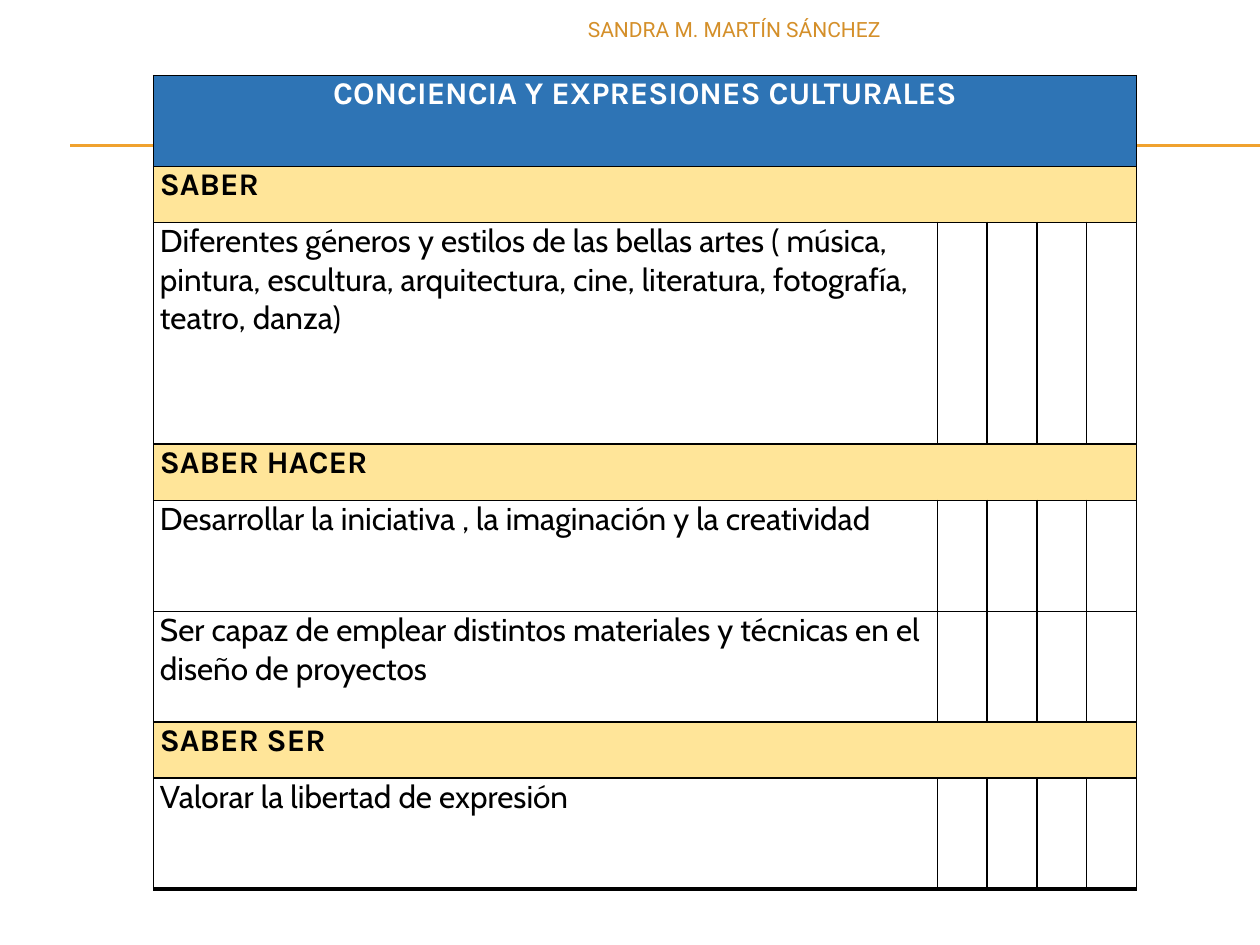
import pptx
import pptx.util
import pptx.dml.color
import pptx.enum.shapes
import pptx.enum.text
import pptx.oxml.ns
import lxml.etree

Pt = pptx.util.Pt
ALIGN = pptx.enum.text.PP_ALIGN

THEME = {
    "title_fill": "2E74B5", "section_fill": "FFE599", "rule": "F0A22E",
    "author": "D48F29", "title_text": "FFFFFF", "text": "000000", "border": "000000",
    "heading_font": "Karla", "body_font": "Cabin", "author_font": "Roboto",
    "table_size": 18, "author_size": 12,
}

AUTHOR = "SANDRA M. MARTÍN SÁNCHEZ"
# Row kind, text, row height
ROWS = [
    ("title", "CONCIENCIA Y EXPRESIONES CULTURALES", 52),
    ("section", "SABER", 31.9),
    ("item", "Diferentes géneros y estilos de las bellas artes ( música, pintura, "
             "escultura, arquitectura, cine, literatura, fotografía, teatro, danza)", 126.7),
    ("section", "SABER HACER", 32.2),
    ("item", "Desarrollar la iniciativa , la imaginación y la creatividad", 63.4),
    ("item", "Ser capaz de emplear distintos materiales y técnicas en el diseño "
             "de proyectos", 63.4),
    ("section", "SABER SER", 31.9),
    ("item", "Valorar la libertad de expresión", 63.4),
]
COLUMN_WIDTHS = [447.8] + [28.45] * 4
TABLE_LEFT, TABLE_TOP = 87.8, 43.2
RULE_LEFT, RULE_RIGHT, RULE_TOPS = 40.3, 720, (82.8, 83.5)
BORDER, BOTTOM_BORDER = 1, 2.25


def color(name):
    return pptx.dml.color.RGBColor.from_string(THEME[name])


def write(text_frame, text, alignment, font, size, color_name, bold=False):
    paragraph = text_frame.paragraphs[0]
    paragraph.alignment = alignment
    run = paragraph.add_run()
    run.text = text
    run.font.name = font
    run.font.size = Pt(size)
    run.font.bold = bold
    run.font.color.rgb = color(color_name)
    return paragraph


def add_rule(slide, top):
    rule = slide.shapes.add_connector(
        pptx.enum.shapes.MSO_CONNECTOR.STRAIGHT,
        Pt(RULE_LEFT), Pt(top), Pt(RULE_RIGHT), Pt(top))
    rule.line.color.rgb = color("rule")
    rule.line.width = Pt(0.75)
    lxml.etree.SubElement(rule.element.spPr, pptx.oxml.ns.qn("a:effectLst"))


def set_borders(cell, bottom_width):
    """Draw the four sides; call before filling, as the schema puts lines first."""
    qn = pptx.oxml.ns.qn
    properties = cell._tc.get_or_add_tcPr()
    for side in "LRTB":
        width = bottom_width if side == "B" else BORDER
        line = lxml.etree.SubElement(properties, qn("a:ln" + side), w=str(int(Pt(width))))
        fill = lxml.etree.SubElement(line, qn("a:solidFill"))
        lxml.etree.SubElement(fill, qn("a:srgbClr"), val=THEME["border"])


def format_cell(cell, kind, bottom_width):
    cell.margin_left = cell.margin_right = Pt(3.6)
    cell.margin_top = cell.margin_bottom = 0
    set_borders(cell, bottom_width)
    if kind == "item":
        cell.fill.background()
    else:
        cell.fill.solid()
        cell.fill.fore_color.rgb = color(kind + "_fill")


def add_competence_table(slide):
    table = slide.shapes.add_table(
        len(ROWS), len(COLUMN_WIDTHS), Pt(TABLE_LEFT), Pt(TABLE_TOP),
        Pt(sum(COLUMN_WIDTHS)), Pt(sum(height for _, _, height in ROWS))).table
    table.first_row = table.horz_banding = False
    for column, width in zip(table.columns, COLUMN_WIDTHS):
        column.width = Pt(width)
    for index, (kind, text, height) in enumerate(ROWS):
        row = table.rows[index]
        row.height = Pt(height)
        bottom_width = BOTTOM_BORDER if index == len(ROWS) - 1 else BORDER
        for cell in row.cells:
            format_cell(cell, kind, bottom_width)
        first = table.cell(index, 0)
        heading = kind != "item"
        if heading:
            first.merge(table.cell(index, len(COLUMN_WIDTHS) - 1))
        paragraph = write(
            first.text_frame, text,
            ALIGN.CENTER if kind == "title" else ALIGN.LEFT,
            THEME["heading_font" if heading else "body_font"], THEME["table_size"],
            "title_text" if kind == "title" else "text", bold=heading)
        paragraph.space_after = Pt(8)


def add_author(slide):
    box = slide.shapes.add_textbox(Pt(282.2), Pt(5.8), Pt(228.2), Pt(23))
    box.text_frame.word_wrap = True
    write(box.text_frame, AUTHOR, ALIGN.RIGHT, THEME["author_font"],
          THEME["author_size"], "author")


def main():
    presentation = pptx.Presentation()
    presentation.slide_width, presentation.slide_height = Pt(720), Pt(540)
    slide = presentation.slides.add_slide(presentation.slide_layouts[6])
    for top in RULE_TOPS:
        add_rule(slide, top)
    add_competence_table(slide)
    add_author(slide)
    presentation.save("out.pptx")


if __name__ == "__main__":
    main()
